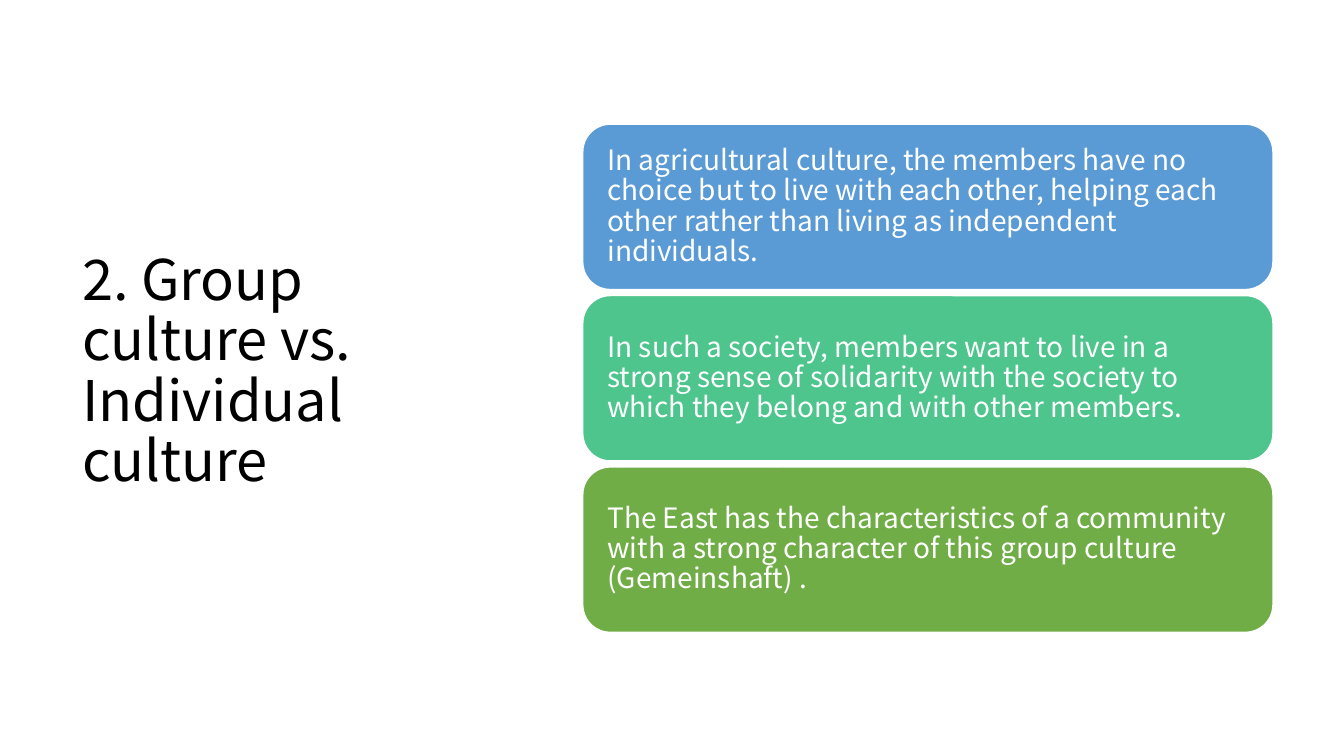
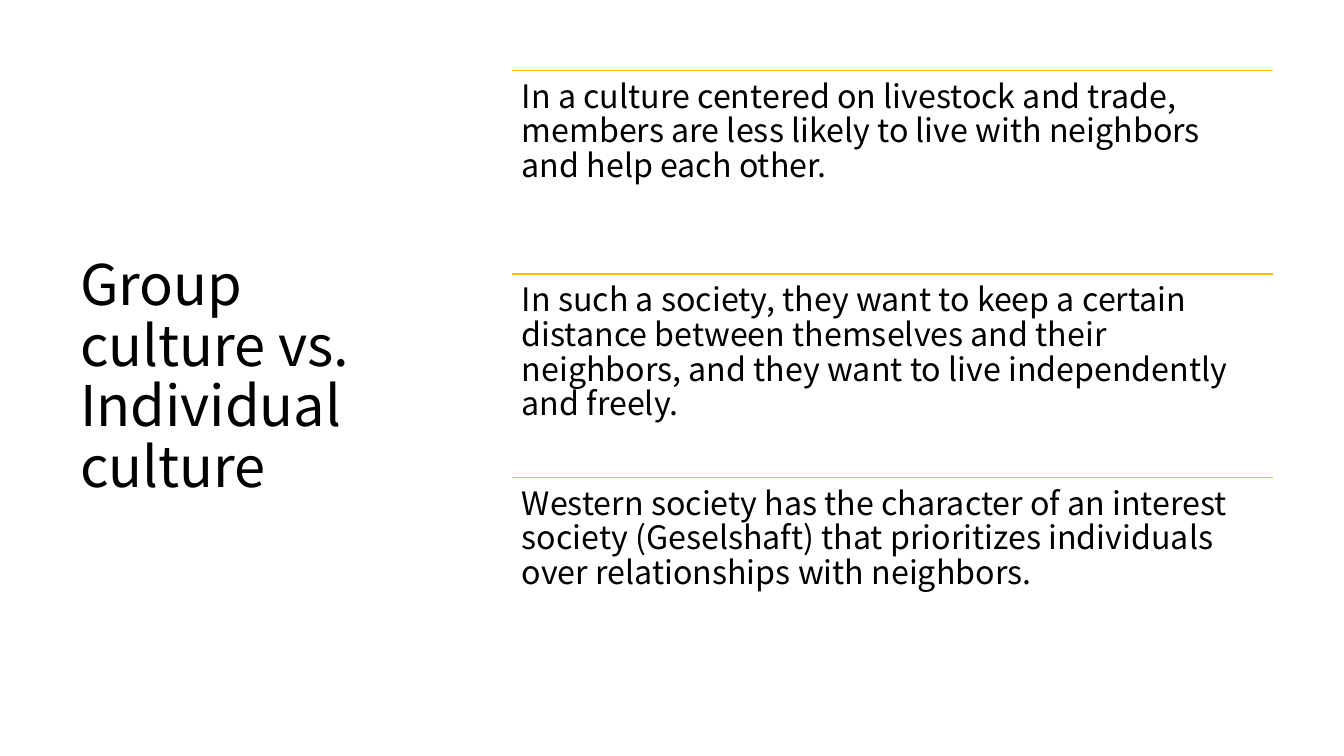
from dataclasses import dataclass

from lxml import etree
from pptx import Presentation
from pptx.dml.color import RGBColor
from pptx.enum import shapes, text
from pptx.oxml import ns
from pptx.util import Pt


@dataclass(frozen=True)
class Theme:
    """Colours, font and type sizes shared by the slides."""
    font: str = "Noto Sans CJK KR"
    ink: str = "000000"
    paper: str = "FFFFFF"
    rule: str = "FFC000"
    cards: tuple = ("5B9BD5", "4DC58D", "70AD47")
    title_size: float = 40
    card_size: float = 20
    row_size: float = 23
    line_width: float = 1
    line_spacing: float = 0.9


@dataclass(frozen=True)
class Box:
    """A rectangle in points."""
    left: float
    top: float
    width: float
    height: float

    def lengths(self):
        """Return left, top, width and height as lengths."""
        return [Pt(value) for value in (self.left, self.top, self.width, self.height)]

    def rows(self, count, gap=0):
        """Split the box into equal rows."""
        height = (self.height - gap * (count - 1)) / count
        return [Box(self.left, self.top + index * (height + gap), self.width, height)
                for index in range(count)]


THEME = Theme()
MIDDLE = text.MSO_ANCHOR.MIDDLE
TOP = text.MSO_ANCHOR.TOP


def write_text(shape, wording, *, size, color, anchor, inset=(7.2, 3.6), space_after=0):
    """Fill a shape with one formatted paragraph."""
    frame = shape.text_frame
    frame.text = wording
    frame.word_wrap = True
    frame.auto_size = text.MSO_AUTO_SIZE.NONE
    frame.vertical_anchor = anchor
    frame.margin_left = frame.margin_right = Pt(inset[0])
    frame.margin_top = frame.margin_bottom = Pt(inset[1])
    paragraph = frame.paragraphs[0]
    paragraph.alignment = text.PP_ALIGN.LEFT
    paragraph.line_spacing = THEME.line_spacing
    paragraph.space_before = Pt(0)
    paragraph.space_after = Pt(space_after)
    paragraph.font.name = THEME.font
    paragraph.font.size = Pt(size)
    paragraph.font.color.rgb = RGBColor.from_string(color)


def set_line(shape, color):
    """Give a shape or connector the theme's thin line."""
    shape.line.color.rgb = RGBColor.from_string(color)
    shape.line.width = Pt(THEME.line_width)


def add_titled_slide(presentation, title, box):
    """Add a slide with its title in the left column."""
    slide = presentation.slides.add_slide(presentation.slide_layouts[5])
    shape = slide.shapes.title
    shape.left, shape.top, shape.width, shape.height = box.lengths()
    write_text(shape, title, size=THEME.title_size, color=THEME.ink, anchor=MIDDLE)
    return slide


def add_cards(slide, box, statements):
    """Stack rounded coloured cards in the box."""
    rows = box.rows(len(statements), gap=4.3)
    for row, color, statement in zip(rows, THEME.cards, statements):
        card = slide.shapes.add_shape(shapes.MSO_SHAPE.ROUNDED_RECTANGLE, *row.lengths())
        card.shadow.inherit = False
        card.fill.solid()
        card.fill.fore_color.rgb = RGBColor.from_string(color)
        set_line(card, THEME.paper)
        write_text(card, statement, size=THEME.card_size, color=THEME.paper,
                   anchor=MIDDLE, inset=(11.8, 11.8), space_after=7)


def add_ruled_rows(slide, box, statements):
    """Stack statements in the box, each under a rule."""
    for row, statement in zip(box.rows(len(statements)), statements):
        left, top, width, height = row.lengths()
        rule = slide.shapes.add_connector(shapes.MSO_CONNECTOR.STRAIGHT,
                                          left, top, left + width, top)
        set_line(rule, THEME.rule)
        etree.SubElement(rule._element.spPr, ns.qn("a:effectLst"))
        label = slide.shapes.add_textbox(left, top, width, height)
        write_text(label, statement, size=THEME.row_size, color=THEME.ink,
                   anchor=TOP, inset=(6.9, 6.9), space_after=8)


def main():
    """Build and save the presentation."""
    presentation = Presentation()
    presentation.slide_width, presentation.slide_height = Pt(960), Pt(540)

    slide = add_titled_slide(presentation, "2. Group culture vs. Individual culture",
                             Box(51.4, 49.5, 288.5, 433.5))
    add_cards(slide, Box(416.3, 88.7, 493, 363), [
        "In agricultural culture, the members have no choice but to live with each other, "
        "helping each other rather than living as independent individuals.",
        "In such a society, members want to live in a strong sense of solidarity with the "
        "society to which they belong and with other members.",
        "The East has the characteristics of a community with a strong character of this "
        "group culture (Gemeinshaft) .",
    ])

    slide = add_titled_slide(presentation, "Group culture vs. Individual culture",
                             Box(50, 50.4, 269, 440))
    add_ruled_rows(slide, Box(365.8, 50.4, 543.6, 436.3), [
        "In a culture centered on livestock and trade, members are less likely to live "
        "with neighbors and help each other.",
        "In such a society, they want to keep a certain distance between themselves and "
        "their neighbors, and they want to live independently and freely.",
        "Western society has the character of an interest society (Geselshaft) that "
        "prioritizes individuals over relationships with neighbors.",
    ])

    presentation.save("out.pptx")


if __name__ == "__main__":
    main()
